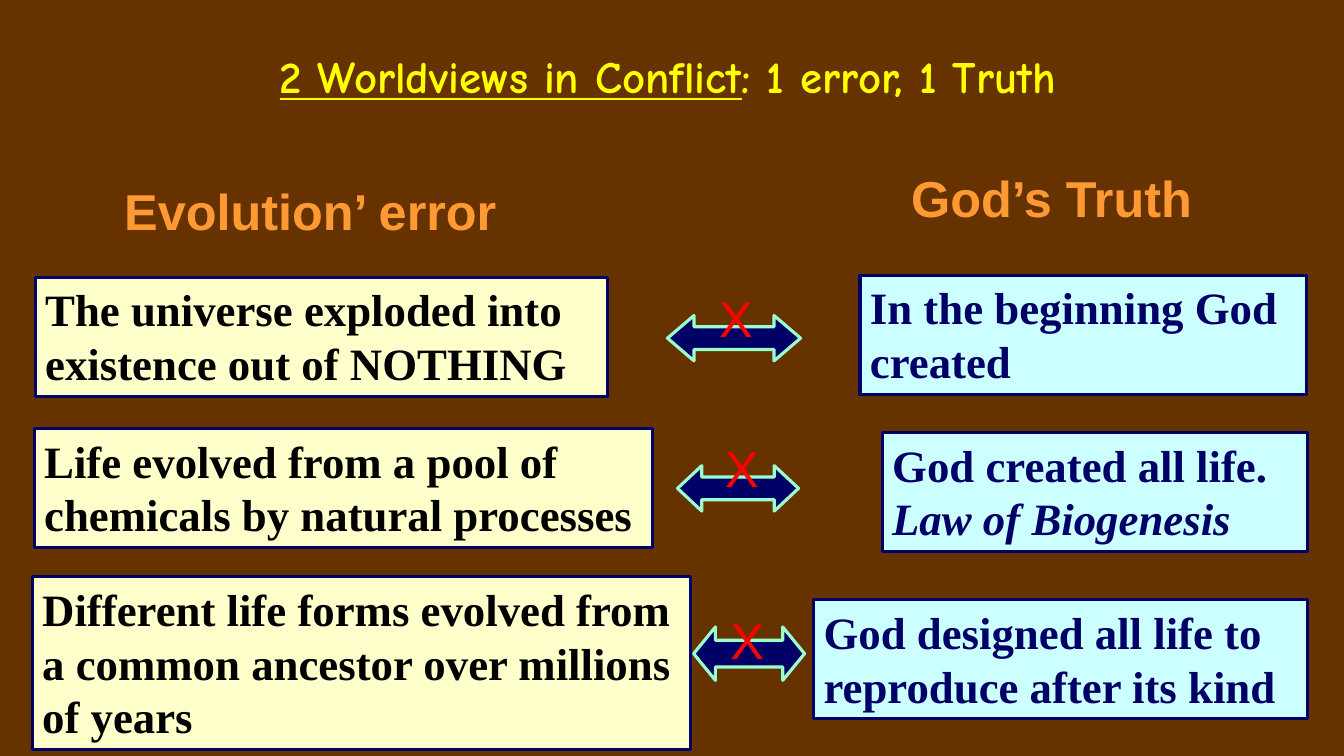
from dataclasses import dataclass

from pptx import Presentation
from pptx.dml.color import RGBColor
from pptx.enum.shapes import MSO_SHAPE
from pptx.enum.text import MSO_ANCHOR, PP_ALIGN
from pptx.util import Inches, Pt


@dataclass(frozen=True)
class Theme:
    background: str = "663300"
    title: str = "FFFF00"
    heading: str = "FF9933"
    error_fill: str = "FFFFCC"
    error_text: str = "000000"
    truth_fill: str = "CCFFFF"
    navy: str = "000066"
    arrow_edge: str = "99FFCC"
    cross: str = "FF0000"
    body_size: int = 32
    heading_size: int = 36
    edge_width: float = 2.25


THEME = Theme()

# Font formats
TITLE = {"name": "Comic Neue", "size": Pt(THEME.body_size), "bold": True}
HEADING = {"name": "Arial", "size": Pt(THEME.heading_size), "bold": True}
CROSS = {"name": "Arial", "size": Pt(THEME.heading_size)}
CLAIM = {"name": "Times New Roman", "size": Pt(THEME.body_size), "bold": True}

# Headings: text, box
HEADINGS = [
    ("Evolution’ error", (0.75, 1.74, 4.66, 0.71)),
    ("God’s Truth", (8.02, 1.61, 4.82, 0.71)),
]

# Each conflict: error runs and box, truth runs and box,
# arrow box and head length, cross position
CONFLICTS = [
    ([("The universe exploded into existence out of NOTHING", {})],
     (0.35, 2.75, 5.68, 1.18),
     [("In the beginning God created", {})],
     (8.53, 2.73, 4.43, 1.18),
     (6.62, 3.13, 1.32, 0.45), 0.585, (6.75, 2.8)),
    ([("Life evolved from a pool of chemicals by natural processes", {})],
     (0.34, 4.25, 6.13, 1.18),
     [("God created all life. ", {}), ("Law of Biogenesis", {"italic": True})],
     (8.75, 4.29, 4.22, 1.18),
     (6.72, 4.62, 1.2, 0.45), 0.534, (6.81, 4.29)),
    ([("Different life forms evolved from a common ancestor "
       "over millions of years", {})],
     (0.32, 5.72, 6.53, 1.72),
     [("God designed all life to reproduce after its kind", {})],
     (8.07, 5.95, 4.9, 1.18),
     (6.88, 6.22, 1.1, 0.53), 0.408, (6.86, 5.99)),
]


def color(value):
    return RGBColor.from_string(value)


def write(holder, runs, font_format, text_color, align=PP_ALIGN.LEFT,
          anchor=MSO_ANCHOR.TOP, wrap=True):
    frame = holder.text_frame
    frame.word_wrap = wrap
    frame.vertical_anchor = anchor
    line = frame.paragraphs[0]
    line.alignment = align
    for text, extra in runs:
        run = line.add_run()
        run.text = text
        run.font.color.rgb = color(text_color)
        for attribute, value in {**font_format, **extra}.items():
            setattr(run.font, attribute, value)


def add_label(slide, box, runs, font_format, text_color, **layout):
    label = slide.shapes.add_textbox(*map(Inches, box))
    write(label, runs, font_format, text_color, PP_ALIGN.CENTER, **layout)


def add_outlined(slide, kind, box, fill, edge):
    outlined = slide.shapes.add_shape(kind, *map(Inches, box))
    outlined.shadow.inherit = False
    outlined.fill.solid()
    outlined.fill.fore_color.rgb = color(fill)
    outlined.line.color.rgb = color(edge)
    outlined.line.width = Pt(THEME.edge_width)
    return outlined


def add_claim(slide, box, runs, fill, text_color):
    claim = add_outlined(slide, MSO_SHAPE.RECTANGLE, box, fill, THEME.navy)
    write(claim, runs, CLAIM, text_color)


def add_crossed_arrow(slide, box, head, cross_at):
    arrow = add_outlined(slide, MSO_SHAPE.LEFT_RIGHT_ARROW, box,
                         THEME.navy, THEME.arrow_edge)
    arrow.adjustments[0] = 0.5
    arrow.adjustments[1] = head
    add_label(slide, (*cross_at, 1.1, 1.16), [("X", {})], CROSS, THEME.cross,
              wrap=False)


def main():
    deck = Presentation()
    deck.slide_width, deck.slide_height = Inches(13.33), Inches(7.5)
    slide = deck.slides.add_slide(deck.slide_layouts[6])
    slide.background.fill.solid()
    slide.background.fill.fore_color.rgb = color(THEME.background)

    # Title and column headings
    title_runs = [("2 Worldviews in Conflict", {"underline": True}),
                  (": 1 error, 1 Truth", {})]
    add_label(slide, (0.5, 0.07, 12.25, 1.35), title_runs, TITLE, THEME.title,
              anchor=MSO_ANCHOR.MIDDLE)
    for text, box in HEADINGS:
        add_label(slide, box, [(text, {})], HEADING, THEME.heading)

    # Opposed claims
    for error, error_box, truth, truth_box, arrow_box, head, cross_at in CONFLICTS:
        add_claim(slide, error_box, error, THEME.error_fill, THEME.error_text)
        add_claim(slide, truth_box, truth, THEME.truth_fill, THEME.navy)
        add_crossed_arrow(slide, arrow_box, head, cross_at)

    deck.save("out.pptx")


if __name__ == "__main__":
    main()
